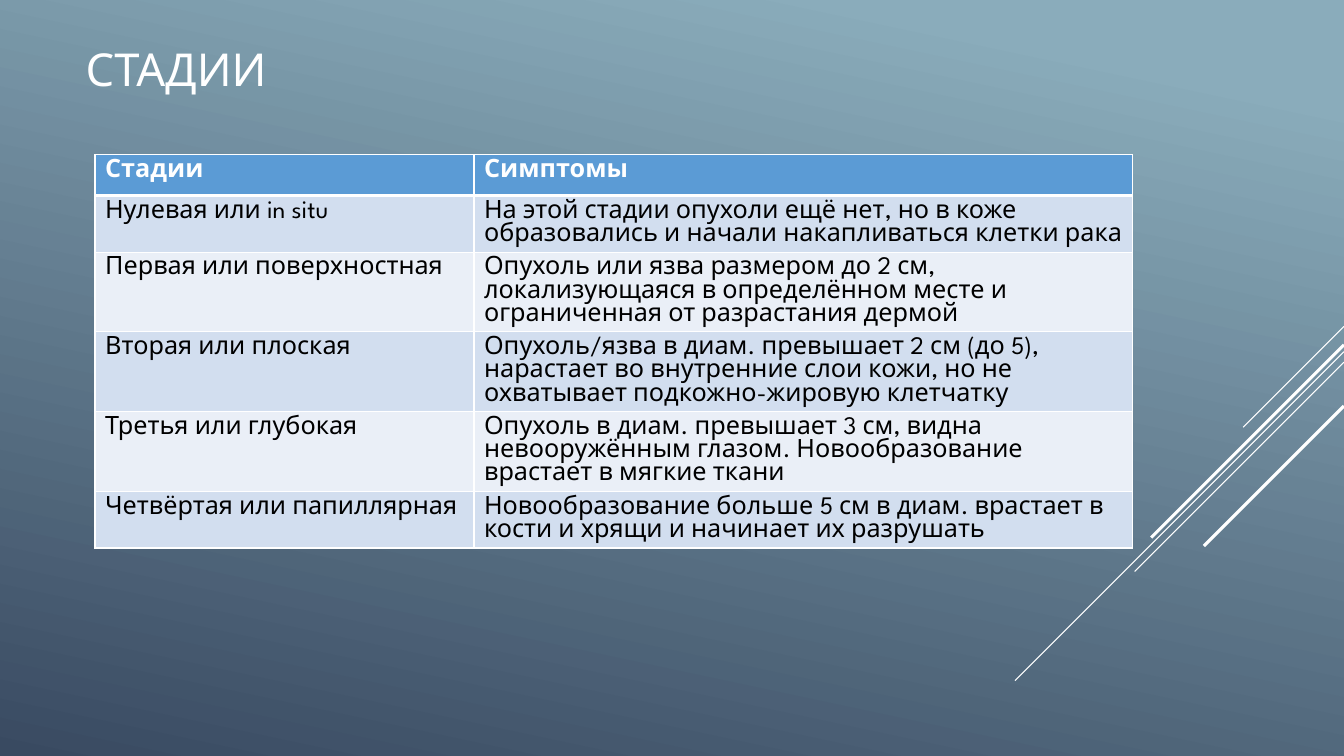
from lxml import etree
from pptx import Presentation
from pptx.dml.color import RGBColor
from pptx.enum.shapes import MSO_CONNECTOR
from pptx.enum.text import MSO_ANCHOR, PP_ALIGN
from pptx.oxml.ns import qn
from pptx.util import Pt

STRAIGHT = MSO_CONNECTOR.STRAIGHT
BOTTOM = MSO_ANCHOR.BOTTOM
LEFT = PP_ALIGN.LEFT

FONT = "League Spartan"
WHITE, BLACK = "FFFFFF", "000000"
HEADER_FILL = "5B9BD5"
BAND_FILLS = ["D2DEEF", "EAEFF7"]
BACKGROUND_STOPS = [(0.1, "8AACBB"), (1, "394A61")]
SLIDE_WIDTH, SLIDE_HEIGHT = 960, 540

TITLE = "СТАДИИ"
STAGES = [
    ("Стадии", "Симптомы"),
    ("Нулевая или in situ",
     "На этой стадии опухоли ещё нет, но в коже образовались и начали накапливаться клетки рака"),
    ("Первая или поверхностная",
     "Опухоль или язва размером до 2 см, локализующаяся в определённом месте и "
     "ограниченная от разрастания дермой"),
    ("Вторая или плоская",
     "Опухоль/язва в диам. превышает 2 см (до 5), нарастает во внутренние слои кожи, "
     "но не охватывает подкожно-жировую клетчатку"),
    ("Третья или глубокая",
     "Опухоль в диам. превышает 3 см, видна невооружённым глазом. "
     "Новообразование врастает в мягкие ткани"),
    ("Четвёртая или папиллярная",
     "Новообразование больше 5 см в диам. врастает в кости и хрящи и начинает их разрушать"),
]
COLUMN_WIDTHS = [270.7, 470.4]
HEADER_HEIGHT, LINE_HEIGHT, CELL_PADDING = 29.2, 16.6, 7.2
CELL_RIGHT_MARGIN = 6
LINES_PER_STAGE = [2, 3, 3, 3, 2]

# Diagonals at 45 degrees: start height on the right edge, run, line width
DIAGONALS = [
    (233.2, 72, 0.75),
    (251.2, 235, 0.75),
    (258.7, 149.5, 0.75),
    (246.3, 137.7, 2.25),
    (290, 100, 2.25),
]


def color(hex_string):
    return RGBColor.from_string(hex_string)


def write(frame, text, *, size, ink, bold=False):
    paragraph = frame.paragraphs[0]
    paragraph.alignment = LEFT
    run = paragraph.add_run()
    run.text = text
    run.font.name = FONT
    run.font.size = Pt(size)
    run.font.bold = bold
    run.font.color.rgb = color(ink)


def add_borders(cell, widths):
    """Draw white borders; widths maps the sides L, R, T, B to points."""
    properties = cell._tc.get_or_add_tcPr()
    for side, width in widths.items():
        border = etree.SubElement(properties, qn(f"a:ln{side}"), w=str(Pt(width)))
        fill = etree.SubElement(border, qn("a:solidFill"))
        etree.SubElement(fill, qn("a:srgbClr"), val=WHITE)


def paint_background(slide):
    fill = slide.background.fill
    fill.gradient()
    fill.gradient_angle = 258
    for stop, (position, shade) in zip(fill.gradient_stops, BACKGROUND_STOPS):
        stop.position = position
        stop.color.rgb = color(shade)


def add_diagonals(slide):
    for top, run, width in DIAGONALS:
        diagonal = slide.shapes.add_connector(
            STRAIGHT, Pt(SLIDE_WIDTH), Pt(top), Pt(SLIDE_WIDTH - run), Pt(top + run))
        diagonal.line.color.rgb = color(WHITE)
        diagonal.line.width = Pt(width)
        etree.SubElement(diagonal._element.spPr, qn("a:effectLst"))


def add_title(slide):
    title = slide.shapes.title
    title.left, title.top, title.width, title.height = Pt(54), Pt(33.1), Pt(671.8), Pt(38.9)
    title.text_frame.vertical_anchor = BOTTOM
    write(title.text_frame, TITLE, size=32.4, ink=WHITE)


def add_stage_table(slide):
    heights = [HEADER_HEIGHT] + [n * LINE_HEIGHT + CELL_PADDING for n in LINES_PER_STAGE]
    table = slide.shapes.add_table(
        len(STAGES), len(COLUMN_WIDTHS), Pt(67.9), Pt(110.5),
        Pt(sum(COLUMN_WIDTHS)), Pt(sum(heights))).table
    for column, width in zip(table.columns, COLUMN_WIDTHS):
        column.width = Pt(width)
    for row, (stage, height) in enumerate(zip(STAGES, heights)):
        table.rows[row].height = Pt(height)
        header = row == 0
        borders = {"L": 1, "R": 1, "T": 3 if row == 1 else 1, "B": 3 if header else 1}
        for column, text in enumerate(stage):
            cell = table.cell(row, column)
            cell.margin_right = Pt(CELL_RIGHT_MARGIN)
            add_borders(cell, borders)
            cell.fill.solid()
            cell.fill.fore_color.rgb = color(HEADER_FILL if header else BAND_FILLS[(row - 1) % 2])
            write(cell.text_frame, text, size=18, ink=WHITE if header else BLACK, bold=header)


def main():
    deck = Presentation()
    deck.slide_width, deck.slide_height = Pt(SLIDE_WIDTH), Pt(SLIDE_HEIGHT)
    title_only = deck.slide_layouts[5]
    slide = deck.slides.add_slide(title_only)
    paint_background(slide)
    add_diagonals(slide)
    add_title(slide)
    add_stage_table(slide)
    deck.save("out.pptx")


if __name__ == "__main__":
    main()
